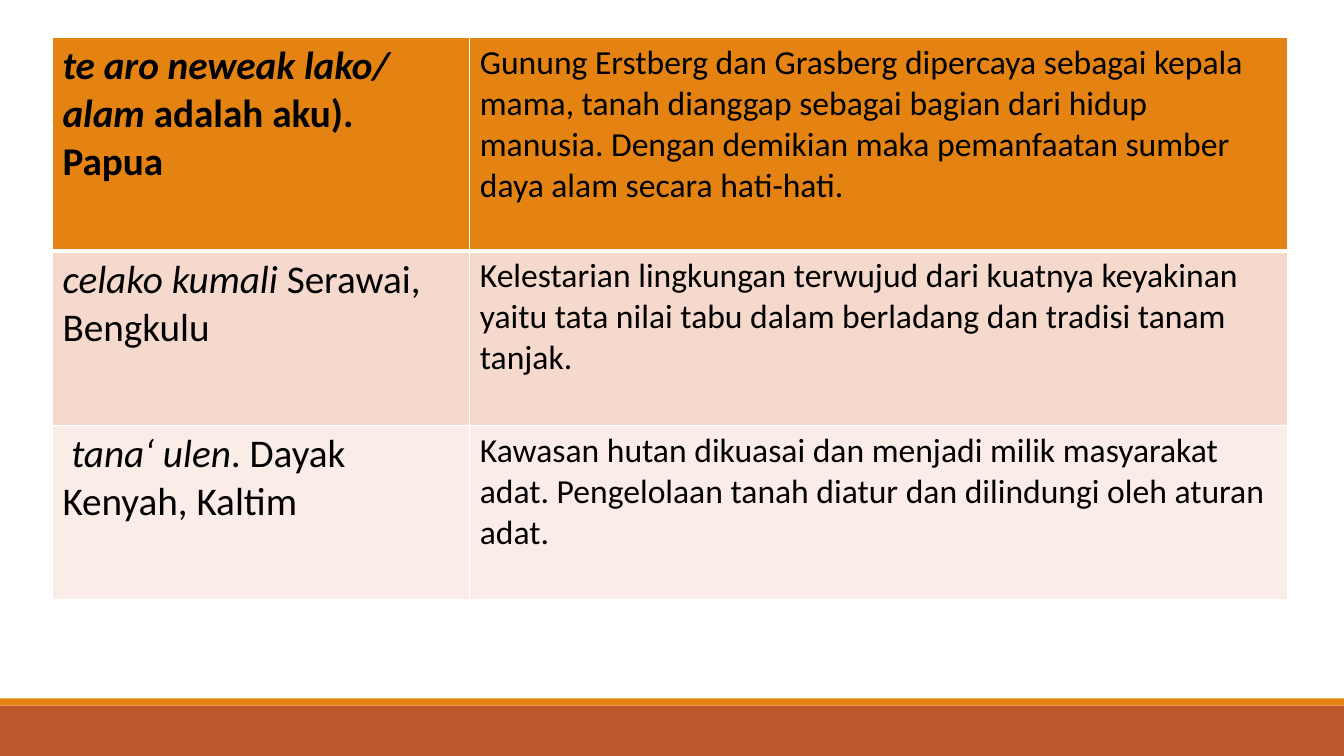
import pptx
import pptx.dml.color
import pptx.enum.shapes
import pptx.util
import lxml.etree

COLORS = {
    "band": "BD582C",
    "accent": "E48312",
    "row_dark": "F5D9CC",
    "row_light": "FAEDE7",
    "border": "FFFFFF",
    "text": "000000",
}
FONT = "Calibri"
A = "http://schemas.openxmlformats.org/drawingml/2006/main"


def rgb(name):
    return pptx.dml.color.RGBColor.from_string(COLORS[name])


def add_text(paragraph, text, size=24, bold=False, italic=False, color="text"):
    run = paragraph.add_run()
    run.text = text
    run.font.name = FONT
    run.font.size = pptx.util.Pt(size)
    run.font.bold = bold
    run.font.italic = italic
    run.font.color.rgb = rgb(color)


deck = pptx.Presentation()
deck.slide_width = pptx.util.Inches(13.33)
deck.slide_height = pptx.util.Inches(7.5)
slide = deck.slides.add_slide(deck.slide_layouts[6])

for band_top, band_height, band_color in [(7, 0.5, "band"), (6.93, 0.07, "accent")]:
    band = slide.shapes.add_shape(
        pptx.enum.shapes.MSO_SHAPE.RECTANGLE,
        0, pptx.util.Inches(band_top), deck.slide_width, pptx.util.Inches(band_height))
    band.shadow.inherit = False
    band.fill.solid()
    band.fill.fore_color.rgb = rgb(band_color)
    band.line.fill.background()

traditions = [
    ("accent", 2.12, True,
     [("te aro neweak lako/ alam", True), (" adalah aku). Papua", False)],
     "Gunung Erstberg dan Grasberg dipercaya sebagai kepala mama, tanah dianggap "
     "sebagai bagian dari hidup manusia. Dengan demikian maka pemanfaatan sumber "
     "daya alam secara hati-hati."),
    ("row_dark", 1.73, False,
     [("celako kumali ", True), ("Serawai, Bengkulu", False)],
     "Kelestarian lingkungan terwujud dari kuatnya keyakinan yaitu tata nilai tabu "
     "dalam berladang dan tradisi tanam tanjak."),
    ("row_light", 1.73, False,
     [(" ", False), ("tana‘ ulen", True), (". Dayak Kenyah, Kaltim", False)],
     "Kawasan hutan dikuasai dan menjadi milik masyarakat adat. Pengelolaan tanah "
     "diatur dan dilindungi oleh aturan adat."),
]
column_widths = [4.14, 8.11]

wisdom = slide.shapes.add_table(
    len(traditions), len(column_widths),
    pptx.util.Inches(0.52), pptx.util.Inches(0.37),
    pptx.util.Inches(sum(column_widths)),
    pptx.util.Inches(sum(tradition[1] for tradition in traditions))).table
for column, width in zip(wisdom.columns, column_widths):
    column.width = pptx.util.Inches(width)

for row, (fill, height, bold, name_parts, meaning) in enumerate(traditions):
    wisdom.rows[row].height = pptx.util.Inches(height)
    name_cell, meaning_cell = wisdom.cell(row, 0), wisdom.cell(row, 1)
    for part, italic in name_parts:
        add_text(name_cell.text_frame.paragraphs[0], part, size=28, bold=bold, italic=italic)
    add_text(meaning_cell.text_frame.paragraphs[0], meaning)

    for cell in (name_cell, meaning_cell):
        properties = cell._tc.get_or_add_tcPr()
        for side in ("lnL", "lnR", "lnT", "lnB"):
            thick = (row, side) in [(0, "lnB"), (1, "lnT")]
            border = lxml.etree.SubElement(
                properties, f"{{{A}}}{side}", w=str(pptx.util.Pt(3 if thick else 1)))
            border_fill = lxml.etree.SubElement(border, f"{{{A}}}solidFill")
            lxml.etree.SubElement(border_fill, f"{{{A}}}srgbClr", val=COLORS["border"])
        cell.fill.solid()
        cell.fill.fore_color.rgb = rgb(fill)

deck.save("out.pptx")
